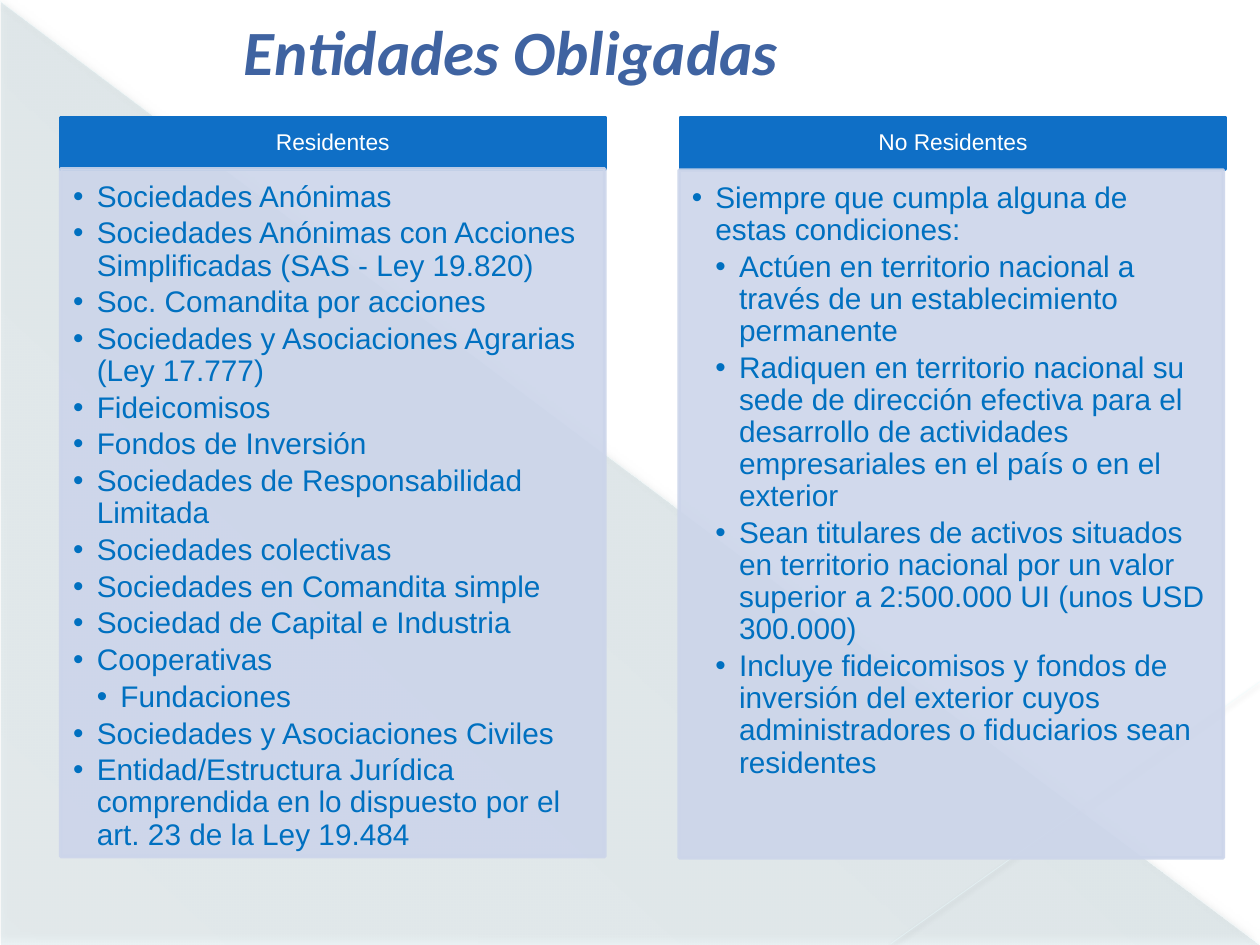
from dataclasses import dataclass

from lxml.etree import SubElement
from pptx import Presentation
from pptx.dml.color import RGBColor as Rgb
from pptx.enum.shapes import MSO_CONNECTOR as Connector, MSO_SHAPE as Shape
from pptx.enum.text import MSO_ANCHOR as Anchor, MSO_AUTO_SIZE as AutoSize, PP_ALIGN as Align
from pptx.oxml.ns import qn
from pptx.util import Pt


@dataclass(frozen=True)
class Theme:
    title: str = "3F63A1"
    header: str = "0F6FC6"
    header_text: str = "FFFFFF"
    panel: str = "CCD5EA"
    panel_text: str = "0070C0"
    backdrop: str = "04617B"
    upper_ray: str = "E9FCFF"
    lower_ray: str = "EBFCFF"
    shadow: str = "000000"
    title_font: str = "Calibri"
    body_font: str = "Arial"
    title_size: float = 36
    header_size: float = 13
    panel_size: float = 17


RESIDENTS = [
    (0, "Sociedades Anónimas"),
    (0, "Sociedades Anónimas con Acciones Simplificadas (SAS - Ley 19.820)"),
    (0, "Soc. Comandita por acciones"),
    (0, "Sociedades y Asociaciones Agrarias (Ley 17.777)"),
    (0, "Fideicomisos"),
    (0, "Fondos de Inversión"),
    (0, "Sociedades de Responsabilidad Limitada"),
    (0, "Sociedades colectivas"),
    (0, "Sociedades en Comandita simple"),
    (0, "Sociedad de Capital e Industria"),
    (0, "Cooperativas"),
    (1, "Fundaciones"),
    (0, "Sociedades y Asociaciones Civiles"),
    (0, "Entidad/Estructura Jurídica comprendida en lo dispuesto por el art. 23 de la Ley 19.484"),
]
NON_RESIDENTS = [
    (0, "Siempre que cumpla alguna de estas condiciones:"),
    (1, "Actúen en territorio nacional a través de un establecimiento permanente"),
    (1, "Radiquen en territorio nacional su sede de dirección efectiva para el desarrollo "
        "de actividades empresariales en el país o en el exterior"),
    (1, "Sean titulares de activos situados en territorio nacional por un valor superior "
        "a 2:500.000 UI (unos USD 300.000)"),
    (1, "Incluye fideicomisos y fondos de inversión del exterior cuyos administradores "
        "o fiduciarios sean residentes"),
]


def assign(target, values):
    for attribute, value in values.items():
        setattr(target, attribute, value)


def set_alpha(shape, *percents):
    for color, percent in zip(shape._element.spPr.iter(qn("a:srgbClr")), percents):
        SubElement(color, qn("a:alpha"), val=str(percent * 1000))


class SlideBuilder:
    """Holds the theme and the current slide and draws each kind of element."""

    def __init__(self, theme, slide):
        self.theme = theme
        self.slide = slide
        self.places = {place.placeholder_format.idx: place for place in slide.placeholders}
        self.backdrop_depth = 2

    def send_back(self, shape):
        self.slide.shapes._spTree.insert(self.backdrop_depth, shape._element)
        self.backdrop_depth += 1

    def cast_shadow(self, shape, alpha, blur, distance, angle):
        effects = SubElement(shape._element.spPr, qn("a:effectLst"))
        outer = SubElement(effects, qn("a:outerShdw"), blurRad=str(Pt(blur)),
                           dist=str(Pt(distance)), dir=str(angle * 60000),
                           algn="tl", rotWithShape="0")
        color = SubElement(outer, qn("a:srgbClr"), val=self.theme.shadow)
        SubElement(color, qn("a:alpha"), val=str(alpha * 1000))

    def triangle(self, box):
        wedge = self.slide.shapes.add_shape(Shape.RIGHT_TRIANGLE, *map(Pt, box))
        wedge.line.fill.background()
        wedge.fill.gradient()
        wedge.fill.gradient_angle = 227
        for stop, position in zip(wedge.fill.gradient_stops, (0, 1)):
            stop.position = position
            stop.color.rgb = Rgb.from_string(self.theme.backdrop)
        set_alpha(wedge, 10, 8)
        self.cast_shadow(wedge, 50, 5, 2, 245)
        self.send_back(wedge)

    def ray(self, ends, color, width, alpha):
        edge = self.slide.shapes.add_connector(Connector.STRAIGHT, *map(Pt, ends))
        edge.line.color.rgb = Rgb.from_string(color)
        edge.line.width = Pt(width)
        set_alpha(edge, alpha)
        self.cast_shadow(edge, 38, 3.1, 1.6, 90)
        self.send_back(edge)

    def place(self, idx, box, anchor, insets):
        holder = self.places[idx]
        assign(holder, dict(zip(("left", "top", "width", "height"), map(Pt, box))))
        sides = ("margin_left", "margin_top", "margin_right", "margin_bottom")
        assign(holder.text_frame, {
            "word_wrap": True, "auto_size": AutoSize.NONE, "vertical_anchor": anchor,
            **dict(zip(sides, map(Pt, insets)))})
        return holder

    def paint(self, holder, color):
        holder.fill.solid()
        holder.fill.fore_color.rgb = holder.line.color.rgb = Rgb.from_string(color)
        holder.line.width = Pt(2)

    def fill_paragraph(self, paragraph, wording, font, color, layout):
        run = paragraph.add_run()
        run.text = wording
        assign(paragraph, {"space_before": Pt(0), **layout})
        assign(run.font, font)
        run.font.color.rgb = Rgb.from_string(color)

    def title(self, wording, box):
        holder = self.place(0, box, Anchor.TOP, (7.2, 3.6, 7.2, 3.6))
        font = {"name": self.theme.title_font, "size": Pt(self.theme.title_size),
                "bold": True, "italic": True}
        self.fill_paragraph(holder.text_frame.paragraphs[0], wording, font, self.theme.title,
                            {"alignment": Align.CENTER})

    def header(self, idx, wording, box):
        holder = self.place(idx, box, Anchor.MIDDLE, (7.2, 4.3, 7.2, 4.3))
        self.paint(holder, self.theme.header)
        font = {"name": self.theme.body_font, "size": Pt(self.theme.header_size), "bold": False}
        self.fill_paragraph(holder.text_frame.paragraphs[0], wording, font,
                            self.theme.header_text,
                            {"alignment": Align.CENTER, "line_spacing": 0.9})

    def bullets(self, idx, entries, box):
        holder = self.place(idx, box, Anchor.TOP, (7.2, 7.2, 9.4, 10.8))
        self.paint(holder, self.theme.panel)
        set_alpha(holder, 90, 90)
        font = {"name": self.theme.body_font, "size": Pt(self.theme.panel_size), "bold": False}
        frame = holder.text_frame
        for number, (level, wording) in enumerate(entries):
            paragraph = frame.add_paragraph() if number else frame.paragraphs[0]
            self.fill_paragraph(paragraph, wording, font, self.theme.panel_text,
                                {"level": level, "alignment": Align.LEFT,
                                 "line_spacing": 0.9, "space_after": Pt(2.6)})
            properties = paragraph._p.get_or_add_pPr()
            properties.set("marL", str(Pt(13.5 * (level + 1))))
            properties.set("indent", str(-Pt(13.5)))
            SubElement(properties, qn("a:buFont"), typeface=self.theme.body_font)
            SubElement(properties, qn("a:buChar"), char="•")


def main():
    deck = Presentation()
    assign(deck, {"slide_width": Pt(720), "slide_height": Pt(540)})
    comparison = deck.slide_layouts.get_by_name("Comparison")
    theme = Theme()
    builder = SlideBuilder(theme, deck.slides.add_slide(comparison))

    builder.triangle((0.7, 1.4, 719.3, 538.6))
    builder.ray((0, 0.7, 719.3, 539.3), theme.upper_ray, 0.4, 35)
    builder.ray((720, 389.5, 509, 539.3), theme.lower_ray, 0.48, 45)

    builder.title("Entidades Obligadas", (36.7, 3.6, 510.5, 51))
    columns = [
        (1, "Residentes", RESIDENTS, 34.6, 34.6, 96.5),
        (3, "No Residentes", NON_RESIDENTS, 389, 388.1, 97.2),
    ]
    for idx, heading, entries, header_left, panel_left, panel_top in columns:
        builder.header(idx, heading, (header_left, 67, 311, 29.5))
        builder.bullets(idx + 1, entries, (panel_left, panel_top, 311, 393))
    deck.save("out.pptx")


if __name__ == "__main__":
    main()
